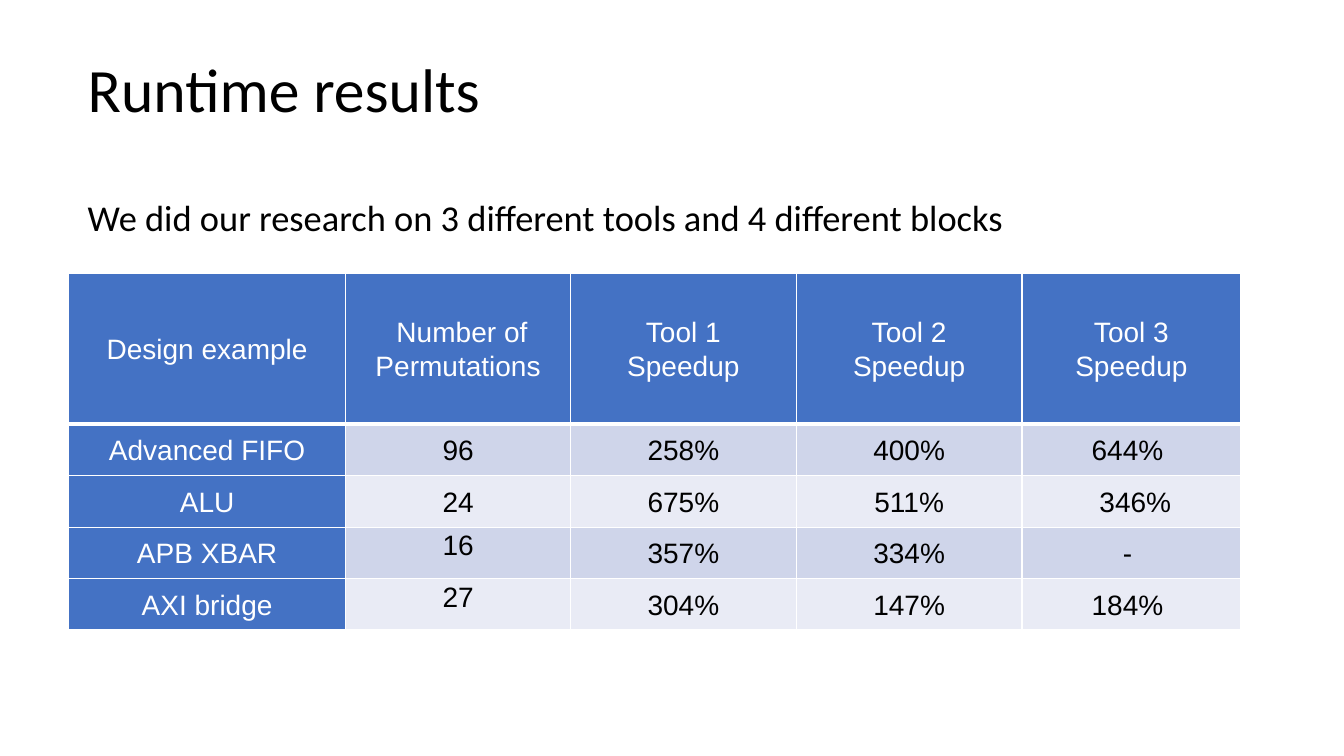
from lxml.etree import SubElement
from pptx import Presentation
from pptx.dml.color import RGBColor
from pptx.enum.text import MSO_ANCHOR, MSO_AUTO_SIZE, PP_ALIGN
from pptx.oxml.ns import qn
from pptx.util import Inches, Pt

BLACK = RGBColor(0x00, 0x00, 0x00)
WHITE = RGBColor(0xFF, 0xFF, 0xFF)
BLUE = RGBColor(0x44, 0x72, 0xC4)
BAND_DARK = RGBColor(0xCF, 0xD5, 0xEA)
BAND_LIGHT = RGBColor(0xE9, 0xEB, 0xF5)

GRID_COLUMNS, GRID_ROWS = 40, 30
COLUMN_WIDTHS = [8.25, 6.69, 6.72, 6.72, 6.51]
ROW_HEIGHTS = [6] + [2.04] * 4
RESULTS = [
    ["Design example", " Number of Permutations"]
    + [f"Tool {number}\nSpeedup" for number in (1, 2, 3)],
    ["Advanced FIFO", "96", "258%", "400%", "644% "],
    ["ALU", "24", "675%", "511%", " 346%"],
    ["APB XBAR", "16", "357%", "334%", "- "],
    ["AXI bridge", "27", "304%", "147%", "184% "],
]
TOP_ALIGNED = {(3, 1), (4, 1)}
TIGHT = {"margin_left": Inches(0.07), "margin_right": Inches(0.07),
         "margin_top": Inches(0.01), "margin_bottom": Inches(0.01)}


def apply(target, values):
    for name, value in values.items():
        setattr(target, name, value)


class SlideBuilder:
    def __init__(self, deck):
        self.deck = deck
        self.page = deck.slides.add_slide(deck.slide_layouts[1])
        self.heading_font = "Calibri"
        self.table_font = "Arial"

    def across(self, columns):
        return round(self.deck.slide_width * columns / GRID_COLUMNS)

    def down(self, rows):
        return round(self.deck.slide_height * rows / GRID_ROWS)

    def place(self, left, top, width, height):
        return {"left": self.across(left), "top": self.down(top),
                "width": self.across(width), "height": self.down(height)}

    def format_text(self, para, font, size, color, layout):
        apply(para, layout)
        apply(para.font, {"name": font, "size": Pt(size), "bold": False})
        para.font.color.rgb = color

    def placeholder(self, box, text, area, size, anchor, spacing):
        apply(box, self.place(*area))
        frame = box.text_frame
        apply(frame, {"text": text, "word_wrap": True, "vertical_anchor": anchor,
                      "auto_size": MSO_AUTO_SIZE.NONE})
        para = frame.paragraphs[0]
        properties = para._p.get_or_add_pPr()
        apply_indent = {"marL": "0", "indent": "0"}
        for name, value in apply_indent.items():
            properties.set(name, value)
        SubElement(properties, qn("a:buNone"))
        self.format_text(para, self.heading_font, size, BLACK, {
            "alignment": PP_ALIGN.LEFT, "line_spacing": spacing, "space_before": Pt(0)})

    def title(self, text, area):
        self.placeholder(self.page.shapes.title, text, area, 44, MSO_ANCHOR.MIDDLE, 0.9)

    def body(self, text, area):
        self.placeholder(self.page.placeholders[1], text, area, 26, MSO_ANCHOR.TOP, 1.5)

    def borders(self, cell, bottom):
        properties = cell._tc.get_or_add_tcPr()
        for side, width in {"lnL": 1, "lnR": 1, "lnT": 1, "lnB": bottom}.items():
            line = SubElement(properties, qn(f"a:{side}"), w=str(Pt(width)))
            fill = SubElement(line, qn("a:solidFill"))
            SubElement(fill, qn("a:srgbClr"), val=str(WHITE))

    def cell(self, cell, row, column, text):
        header = row == 0
        label = header or column == 0
        band = BAND_DARK if row % 2 else BAND_LIGHT
        self.borders(cell, 3 if header else 1)
        cell.fill.solid()
        cell.fill.fore_color.rgb = BLUE if label else band
        top = (row, column) in TOP_ALIGNED
        cell.vertical_anchor = MSO_ANCHOR.TOP if top else MSO_ANCHOR.MIDDLE
        if not header or column < 2:
            apply(cell, TIGHT)
        cell.text_frame.text = text
        for para in cell.text_frame.paragraphs:
            self.format_text(para, self.table_font, 20, WHITE if label else BLACK, {
                "alignment": PP_ALIGN.CENTER, "line_spacing": 1.07})

    def table(self, values, left, top):
        area = self.place(left, top, sum(COLUMN_WIDTHS), sum(ROW_HEIGHTS))
        table = self.page.shapes.add_table(len(values), len(values[0]), **area).table
        apply(table, {"first_row": False, "horz_banding": False})
        for column, width in zip(table.columns, COLUMN_WIDTHS):
            column.width = self.across(width)
        for row, height in zip(table.rows, ROW_HEIGHTS):
            row.height = self.down(height)
        for row, texts in enumerate(values):
            for column, text in enumerate(texts):
                self.cell(table.cell(row, column), row, column, text)


def main():
    deck = Presentation()
    apply(deck, {"slide_width": Inches(13.33), "slide_height": Inches(7.5)})
    builder = SlideBuilder(deck)
    builder.title("Runtime results", (2.31, 0.76, 35.5, 5.8))
    builder.table(RESULTS, 2.04, 10.84)
    builder.body("We did our research on 3 different tools and 4 different blocks",
                 (2.31, 6.68, 33.34, 3.44))
    deck.save("out.pptx")


if __name__ == "__main__":
    main()
